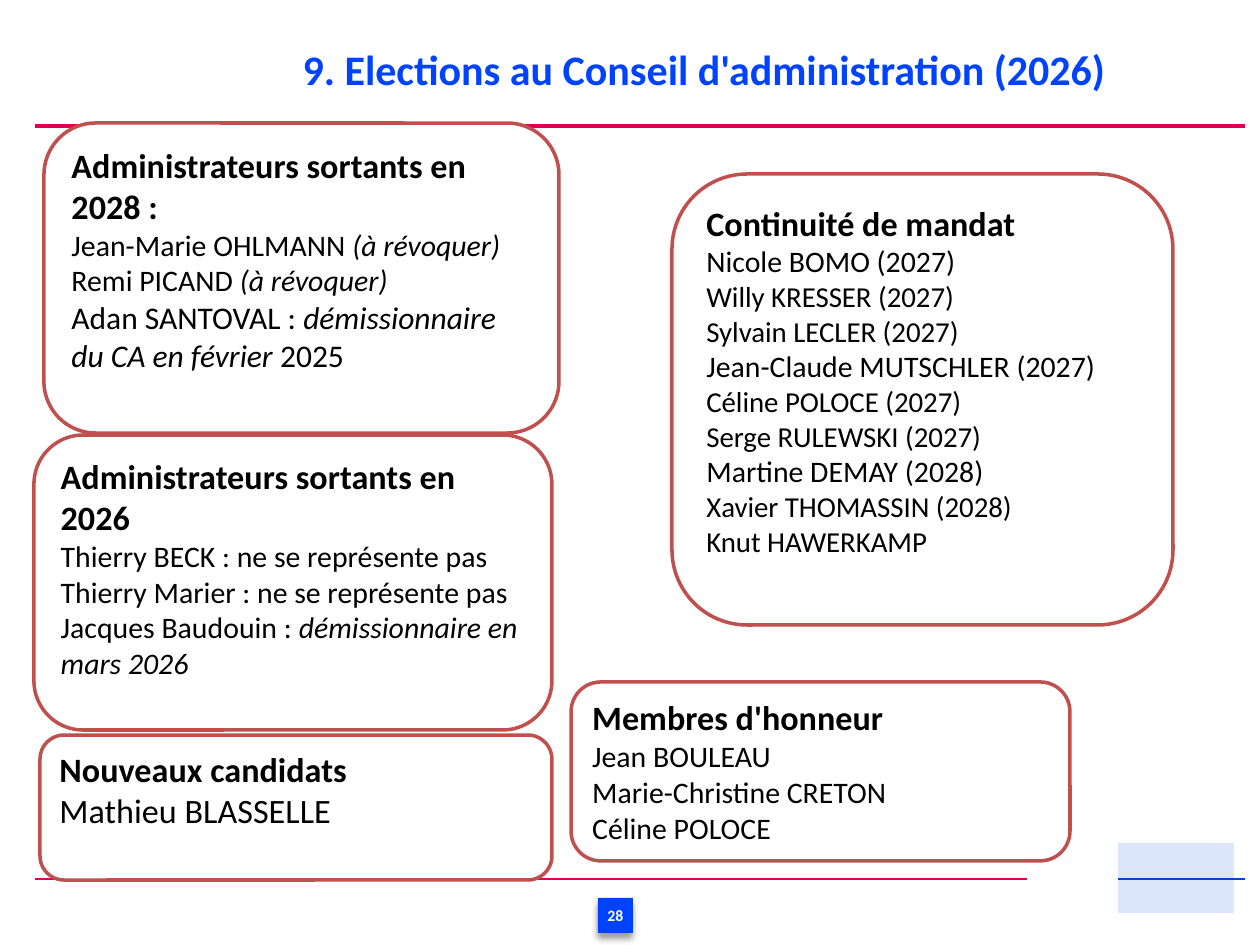
from lxml import etree
from pptx import Presentation
from pptx.dml.color import RGBColor
from pptx.enum.shapes import MSO_CONNECTOR as CONN, MSO_SHAPE as SHAPE
from pptx.enum.text import MSO_ANCHOR as ANCHOR, MSO_AUTO_SIZE as AUTO, PP_ALIGN as ALIGN
from pptx.oxml.ns import nsdecls, qn
from pptx.util import Emu, Pt

PX_PER_INCH = 126
FONT = "Calibri"
BLUE, PINK, RED, WHITE, BLACK = "0043FF", "E00053", "C0504D", "FFFFFF", "000000"
LOGO_TINT = "DCE6FB"
HEADING_SIZE = 19.5

# Each card: position, heading, then lines as (size, upright run, italic run, upright run...)
CARDS = [
    ((44, 123, 515, 310), "Administrateurs sortants en 2028 :", [
        (17, "Jean-Marie OHLMANN ", "(à révoquer)"),
        (17, "Remi PICAND ", "(à révoquer)"),
        (18, "Adan SANTOVAL : ", "démissionnaire du CA en février ", "2025"),
    ]),
    ((40, 735, 512, 145), "Nouveaux candidats", [(19.5, "Mathieu BLASSELLE")]),
    ((672, 174, 501, 451), "Continuité de mandat", [
        (17, "Nicole BOMO (2027)"),
        (16.5, "Willy KRESSER (2027)"),
        (16.5, "Sylvain LECLER (2027)"),
        (17, "Jean-Claude MUTSCHLER (2027)"),
        (16.5, "Céline POLOCE (2027)"),
        (16.5, "Serge RULEWSKI (2027)"),
        (17, "Martine DEMAY (2028)"),
        (16.5, "Xavier THOMASSIN (2028)"),
        (16.5, "Knut HAWERKAMP"),
    ]),
    ((34, 435, 518, 295), "Administrateurs sortants en 2026", [
        (17, "Thierry BECK : ne se représente pas"),
        (17, "Thierry Marier : ne se représente pas"),
        (17, "Jacques Baudouin : ", "démissionnaire en mars 2026"),
    ]),
    ((571, 682, 499, 179), "Membres d'honneur", [
        (17, "Jean BOULEAU"),
        (17, "Marie-Christine CRETON"),
        (17, "Céline POLOCE"),
    ]),
]


def px(n):
    return Emu(round(n * 914400 / PX_PER_INCH))


def rgb(color):
    return RGBColor.from_string(color)


def add_run(p, text, size, color=BLACK, bold=False, italic=False):
    r = p.add_run()
    r.text = text
    font = r.font
    font.name, font.size, font.bold, font.italic = FONT, Pt(size), bold, italic
    font.color.rgb = rgb(color)


def add_box(s, kind, box, fill, line=None):
    sp = s.shapes.add_shape(kind, *map(px, box))
    sp.shadow.inherit = False
    sp.fill.solid()
    sp.fill.fore_color.rgb = rgb(fill)
    if line:
        sp.line.color.rgb = rgb(line)
        sp.line.width = Pt(2)
    else:
        sp.line.fill.background()
    return sp


def add_rule(s, x1, x2, y, color, width):
    rule = s.shapes.add_connector(CONN.STRAIGHT, px(x1), px(y), px(x2), px(y))
    rule.line.color.rgb = rgb(color)
    rule.line.width = Pt(width)
    etree.SubElement(rule._element.spPr, qn("a:effectLst"))


def add_title(s, text):
    title = s.shapes.title
    title.left, title.top, title.width, title.height = map(px, (290, 30, 993, 68))
    tf = title.text_frame
    tf.auto_size = AUTO.NONE
    tf.vertical_anchor = ANCHOR.TOP
    p = tf.paragraphs[0]
    p.alignment = ALIGN.LEFT
    p.line_spacing = 1.15
    add_run(p, text, 24, BLUE, bold=True)


def add_card(s, box, heading, lines):
    tf = add_box(s, SHAPE.ROUNDED_RECTANGLE, box, WHITE, RED).text_frame
    tf.word_wrap = True
    tf.vertical_anchor = ANCHOR.TOP
    p = tf.paragraphs[0]
    p.alignment = ALIGN.LEFT
    add_run(p, heading, HEADING_SIZE, bold=True)
    for size, *texts in lines:
        p = tf.add_paragraph()
        p.alignment = ALIGN.LEFT
        for i, text in enumerate(texts):
            add_run(p, text, size, italic=i % 2 == 1)


def add_page_number(s, number):
    sp = add_box(s, SHAPE.RECTANGLE, (598, 898, 35, 35), BLUE)
    effects = sp._element.spPr.find(qn("a:effectLst"))
    effects.append(etree.fromstring(
        f'<a:outerShdw {nsdecls("a")} blurRad="{Pt(4)}" dist="{Pt(3)}" dir="5400000" '
        'rotWithShape="0"><a:srgbClr val="000000"><a:alpha val="40000"/></a:srgbClr>'
        '</a:outerShdw>'))
    tf = sp.text_frame
    tf.margin_left = tf.margin_right = tf.margin_top = tf.margin_bottom = 0
    tf.vertical_anchor = ANCHOR.MIDDLE
    p = tf.paragraphs[0]
    p.alignment = ALIGN.CENTER
    add_run(p, number, 9, WHITE, bold=True)


def main():
    prs = Presentation()
    prs.slide_width, prs.slide_height = px(1260), px(945)
    s = prs.slides.add_slide(prs.slide_layouts[5])
    add_title(s, "9. Elections au Conseil d'administration (2026)")
    add_rule(s, 35, 1027, 879, PINK, 0.75)
    add_rule(s, 35, 1245, 126, PINK, 1.75)
    add_page_number(s, "28")
    add_box(s, SHAPE.RECTANGLE, (1118, 843, 116, 70), LOGO_TINT)
    add_rule(s, 1118, 1245, 879, "0043E1", 0.75)
    for card in CARDS:
        add_card(s, *card)
    prs.save("out.pptx")


if __name__ == "__main__":
    main()
